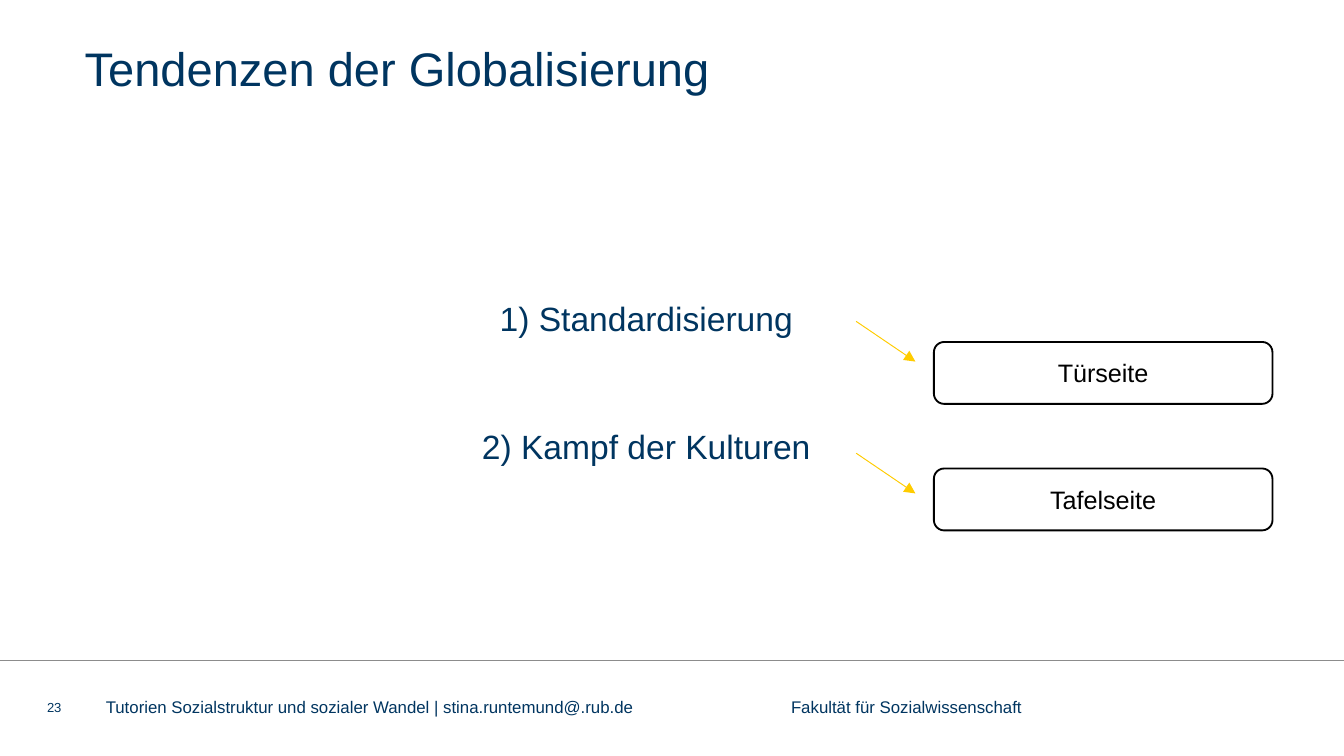
"""Build the slide on tendencies of globalisation."""
from dataclasses import dataclass

from lxml import etree
from pptx import Presentation
from pptx.dml.color import RGBColor
from pptx.enum.shapes import MSO_CONNECTOR, MSO_SHAPE
from pptx.enum.text import MSO_ANCHOR, PP_ALIGN
from pptx.oxml.ns import qn
from pptx.util import Cm, Pt

STRAIGHT = MSO_CONNECTOR.STRAIGHT
ROUNDED = MSO_SHAPE.ROUNDED_RECTANGLE
TOP, MIDDLE = MSO_ANCHOR.TOP, MSO_ANCHOR.MIDDLE
LEFT, CENTER = PP_ALIGN.LEFT, PP_ALIGN.CENTER

FONT = "Arial"
COLORS = {
    "navy": "003560",
    "yellow": "FFCC00",
    "rule": "8C8C8C",
    "white": "FFFFFF",
    "black": "000000",
}


@dataclass
class Label:
    text: str
    left: float
    width: float
    size: float


@dataclass
class Station:
    text: str
    arrow_top: float
    box_top: float


FOOTER = [
    Label("23", 0.89, 0.71, 7),
    Label("Tutorien Sozialstruktur und sozialer Wandel | stina.runtemund@.rub.de", 2, 12, 9),
    Label("Fakultät für Sozialwissenschaft", 14.95, 6, 9),
]
TOPICS = ["1) Standardisierung", "2) Kampf der Kulturen"]
STATIONS = [Station("Türseite", 6.07, 6.46), Station("Tafelseite", 8.56, 8.85)]


def color(name: str) -> RGBColor:
    return RGBColor.from_string(COLORS[name])


def write(shape, lines: list[str], size: float, anchor=TOP, align=LEFT,
          ink: str = "navy", gap: float = 0) -> None:
    tf = shape.text_frame
    tf.word_wrap = True
    tf.vertical_anchor = anchor
    tf.margin_left = tf.margin_right = tf.margin_top = tf.margin_bottom = 0
    for i, line in enumerate(lines):
        p = tf.add_paragraph() if i else tf.paragraphs[0]
        p.text = line
        p.alignment = align
        p.space_before = Pt(gap if i else 0)
        p.font.name = FONT
        p.font.size = Pt(size)
        p.font.color.rgb = color(ink)


def add_line(s, x1: float, y1: float, x2: float, y2: float, ink: str, arrow: bool = False) -> None:
    c = s.shapes.add_connector(STRAIGHT, Cm(x1), Cm(y1), Cm(x2), Cm(y2))
    c.line.color.rgb = color(ink)
    c.line.width = Pt(0.5)
    if arrow:
        etree.SubElement(c.line._get_or_add_ln(), qn("a:tailEnd"), type="triangle")
    etree.SubElement(c._element.spPr, qn("a:effectLst"))


def add_footer(s, label: Label) -> None:
    sp = s.shapes.add_textbox(Cm(label.left), Cm(13.21), Cm(label.width), Cm(0.3))
    write(sp, [label.text], label.size, MIDDLE)


def add_station(s, station: Station) -> None:
    add_line(s, 16.18, station.arrow_top, 17.3, station.arrow_top + 0.76, "yellow", arrow=True)
    sp = s.shapes.add_shape(ROUNDED, Cm(17.65), Cm(station.box_top), Cm(6.4), Cm(1.17))
    sp.shadow.inherit = False
    sp.fill.solid()
    sp.fill.fore_color.rgb = color("white")
    sp.line.color.rgb = color("black")
    sp.line.width = Pt(1)
    write(sp, [station.text], 13.5, MIDDLE, CENTER, "black")


def main() -> None:
    prs = Presentation()
    prs.slide_width, prs.slide_height = Cm(25.4), Cm(14.28)
    s = prs.slides.add_slide(prs.slide_layouts[5])

    title = s.shapes.title
    title.left, title.top, title.width, title.height = Cm(1.6), Cm(0.66), Cm(23.32), Cm(0.86)
    write(title, ["Tendenzen der Globalisierung"], 25.2)
    title.text_frame.margin_top = Cm(0.08)

    topics = s.shapes.add_textbox(0, Cm(5.62), Cm(24.43), Cm(3.2))
    write(topics, TOPICS, 18, align=CENTER, gap=47)

    add_line(s, 0, 12.47, 25.4, 12.47, "rule")
    for label in FOOTER:
        add_footer(s, label)
    for station in STATIONS:
        add_station(s, station)

    prs.save("out.pptx")


if __name__ == "__main__":
    main()
